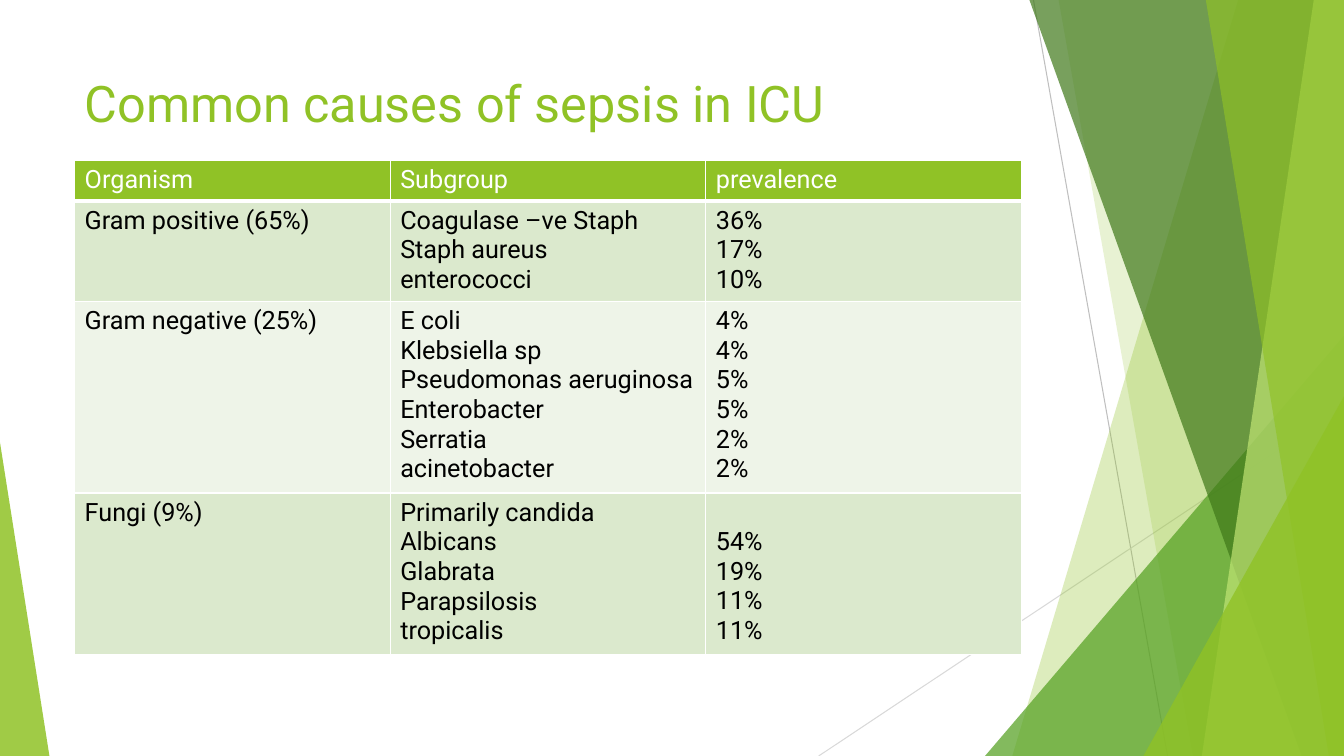
from lxml import etree
from pptx import Presentation
from pptx.dml.color import RGBColor
from pptx.enum.shapes import MSO_CONNECTOR, MSO_SHAPE
from pptx.oxml.ns import qn
from pptx.util import Inches, Pt

STRAIGHT = MSO_CONNECTOR.STRAIGHT
TRIANGLE = MSO_SHAPE.ISOSCELES_TRIANGLE

WIDTH, HEIGHT = 13.33, 7.5
FONT = "Roboto"
COLORS = {
    "lime": "90C226",
    "green": "54A021",
    "forest": "3F7819",
    "pale lime": "C0E474",
    "dark band": "DBE9CD",
    "light band": "EEF4E8",
    "gray": "BFBFBF",
    "light gray": "D9D9D9",
    "white": "FFFFFF",
    "black": "000000",
}

HEADERS = ["Organism", "Subgroup", "prevalence"]
# organism, subgroups, prevalences, row height
GROUPS = [
    ("Gram positive (65%)",
     ["Coagulase –ve Staph", "Staph aureus", "enterococci"],
     ["36%", "17%", "10%"], 0.98),
    ("Gram negative (25%)",
     ["E coli", "Klebsiella sp", "Pseudomonas aeruginosa", "Enterobacter",
      "Serratia", "acinetobacter"],
     ["4%", "4%", "5%", "5%", "2%", "2%"], 1.86),
    ("Fungi (9%)",
     ["Primarily candida", "Albicans", "Glabrata", "Parapsilosis", "tropicalis"],
     ["54%", "19%", "11%", "11%"], 1.56),
]
HEADER_HEIGHT = 0.4
LINE_HEIGHT = 0.29
CELL_MARGIN = 0.05


def rgb(name):
    return RGBColor.from_string(COLORS[name])


class SlideBuilder:
    def __init__(self, slide):
        self.shapes = slide.shapes

    def paint(self, shape, color, opacity):
        shape.shadow.inherit = False
        shape.fill.solid()
        shape.fill.fore_color.rgb = rgb(color)
        shape.line.fill.background()
        fill_color = shape._element.spPr.find(qn("a:solidFill"))[0]
        etree.SubElement(fill_color, qn("a:alpha"), val=str(opacity * 1000))

    def line(self, start, end, color):
        points = [Inches(value) for value in (*start, *end)]
        connector = self.shapes.add_connector(STRAIGHT, *points)
        connector.line.color.rgb = rgb(color)
        connector.line.width = Pt(0.75)
        etree.SubElement(connector._element.spPr, qn("a:effectLst"))

    def shard(self, top_left, bottom_left, color, opacity):
        """Draw a full-height panel from a slanted left edge to the slide's right edge."""
        corners = [(top_left, 0), (WIDTH, 0), (WIDTH, HEIGHT), (bottom_left, HEIGHT)]
        points = [(Inches(x), Inches(y)) for x, y in corners]
        outline = self.shapes.build_freeform(*points[0], scale=1.0)
        outline.add_line_segments(points[1:], close=True)
        self.paint(outline.convert_to_shape(), color, opacity)

    def corner_triangle(self, left, top, width, peak, color, opacity):
        """Draw a triangle standing on the slide's bottom edge."""
        triangle = self.shapes.add_shape(
            TRIANGLE, Inches(left), Inches(top), Inches(width), Inches(HEIGHT - top))
        triangle.adjustments[0] = peak
        self.paint(triangle, color, opacity)

    def set_lines(self, frame, lines, size, color):
        for index, text in enumerate(lines):
            para = frame.add_paragraph() if index else frame.paragraphs[0]
            para.text = text
            para.font.name = FONT
            para.font.size = Pt(size)
            para.font.color.rgb = rgb(color)

    def title(self, text, left, top, width, height):
        box = self.shapes.add_textbox(
            Inches(left), Inches(top), Inches(width), Inches(height))
        box.text_frame.word_wrap = True
        self.set_lines(box.text_frame, [text], 36, "lime")

    def cell(self, cell, lines, fill, color, bottom=1):
        properties = cell._tc.get_or_add_tcPr()
        for side, points in (("lnL", 1), ("lnR", 1), ("lnT", 1), ("lnB", bottom)):
            border = etree.SubElement(properties, qn(f"a:{side}"), w=str(Pt(points)))
            solid = etree.SubElement(border, qn("a:solidFill"))
            etree.SubElement(solid, qn("a:srgbClr"), val=COLORS["white"])
        cell.fill.solid()
        cell.fill.fore_color.rgb = rgb(fill)
        self.set_lines(cell.text_frame, lines, 18, color)

    def causes_table(self, left, top, column_width):
        heights = [HEADER_HEIGHT] + [group[-1] for group in GROUPS]
        table = self.shapes.add_table(
            len(heights), len(HEADERS), Inches(left), Inches(top),
            Inches(column_width * len(HEADERS)), Inches(sum(heights))).table
        for row, height in zip(table.rows, heights):
            row.height = Inches(height)
        for column, header in enumerate(HEADERS):
            table.columns[column].width = Inches(column_width)
            self.cell(table.cell(0, column), [header], "lime", "white", bottom=3)
        for row, (organism, subgroups, shares, _) in enumerate(GROUPS, start=1):
            band = "dark band" if row % 2 else "light band"
            for column, lines in enumerate(([organism], subgroups, shares)):
                self.cell(table.cell(row, column), lines, band, "black")
            # Shares line up with the last subgroups of their row
            skipped = len(subgroups) - len(shares)
            table.cell(row, 2).margin_top = Inches(CELL_MARGIN + skipped * LINE_HEIGHT)


def main():
    deck = Presentation()
    deck.slide_width = Inches(WIDTH)
    deck.slide_height = Inches(HEIGHT)
    page = SlideBuilder(deck.slides.add_slide(deck.slide_layouts[6]))

    page.line((10.25, 0), (11.58, HEIGHT), "gray")
    page.line((WIDTH, 4.03), (8.12, HEIGHT), "light gray")
    page.shard(12.28, 10.04, "lime", 30)
    page.shard(10.5, 11.83, "lime", 20)
    page.corner_triangle(9.77, 3.33, 3.56, 1, "green", 72)
    page.shard(10.21, 12.91, "forest", 70)
    page.shard(13.03, 11.92, "pale lime", 70)
    page.shard(11.96, 13.18, "lime", 65)
    page.corner_triangle(11.34, 3.93, 1.99, 1, "lime", 80)
    page.corner_triangle(0, 4.39, 0.49, 0, "lime", 85)

    page.title("Common causes of sepsis in ICU", 0.74, 0.67, 9.4, 1.44)
    page.causes_table(0.74, 1.59, 3.13)
    deck.save("out.pptx")


if __name__ == "__main__":
    main()
